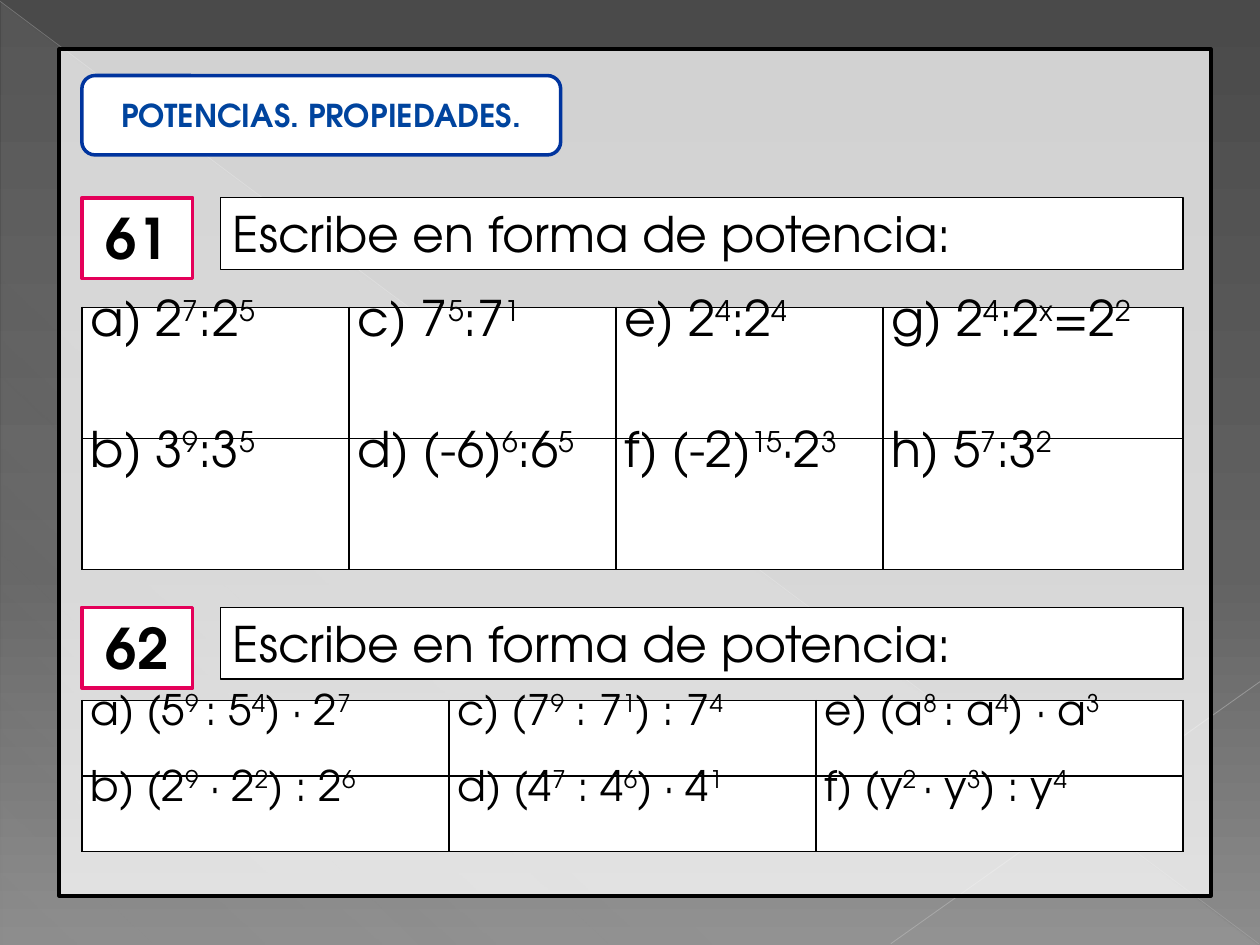
"""Build a slide of exercises on the properties of powers."""
import dataclasses

import lxml.etree
import pptx
import pptx.dml.color
import pptx.enum.shapes
import pptx.enum.text
import pptx.oxml.ns
import pptx.slide
import pptx.util

Inches = pptx.util.Inches
Pt = pptx.util.Pt
qn = pptx.oxml.ns.qn
Kind = pptx.enum.shapes.MSO_SHAPE
Align = pptx.enum.text.PP_ALIGN
Anchor = pptx.enum.text.MSO_ANCHOR
Fit = pptx.enum.text.MSO_AUTO_SIZE

FONT = "TeX Gyre Adventor"
COLORS = {
    "black": "000000", "white": "FFFFFF", "pink": "E40059",
    "edge": "00349E", "title": "00449E", "veil": "D2D2D2",
    "ray": "BFBFBF", "beam": "C6C6C6",
    "dark": "4A4A4A", "mid": "626262", "light": "8C8C8C",
}
LEFT, WIDTH = 0.65, 8.74


@dataclasses.dataclass
class Box:
    """A rectangle with a line of text."""
    at: tuple[float, float, float, float]
    text: str
    size: int
    line: str = "black"
    weight: float = 2
    ink: str = "black"
    bold: bool = True
    kind: int = Kind.RECTANGLE
    align: int = Align.CENTER
    anchor: int = Anchor.TOP
    fit: int = Fit.SHAPE_TO_FIT_TEXT


@dataclasses.dataclass
class Grid:
    """A table whose cells alternate base and raised text around bars."""
    top: float
    cols: list[float]
    high: float
    size: int
    rows: list[list[str]]


@dataclasses.dataclass
class Ray:
    """A thin, faint line."""
    start: tuple[float, float]
    end: tuple[float, float]
    color: str
    weight: float
    alpha: int


def rgb(name: str) -> pptx.dml.color.RGBColor:
    """Return a named colour."""
    return pptx.dml.color.RGBColor.from_string(COLORS[name])


def put(item: object, form: dict) -> None:
    """Set each format value on an item."""
    for name, value in form.items():
        setattr(item, name, value)


def fade(node, alpha: int) -> None:
    """Set the opacity of the first colour in a node."""
    tint = next(node.iter(qn("a:srgbClr")))
    lxml.etree.SubElement(tint, qn("a:alpha"), val=str(alpha * 1000))


def blend(fill, node, stops: list[tuple[int, str, int]], angle: int) -> None:
    """Give a fill a linear gradient of (place, colour, opacity) stops."""
    fill.gradient()
    grad = next(node.iter(qn("a:gradFill")))
    for child in list(grad):
        grad.remove(child)
    items = lxml.etree.SubElement(grad, qn("a:gsLst"))
    for pos, name, alpha in stops:
        stop = lxml.etree.SubElement(items, qn("a:gs"), pos=str(pos * 1000))
        lxml.etree.SubElement(stop, qn("a:srgbClr"), val=COLORS[name])
        if alpha < 100:
            fade(stop, alpha)
    lxml.etree.SubElement(grad, qn("a:lin"), ang=str(angle * 60000), scaled="0")


def write(para, text: str, size: int, ink: str, bold: bool = False) -> None:
    """Add text to a paragraph, raising every second part."""
    for index, part in enumerate(text.split("|")):
        if not part:
            continue
        run = para.add_run()
        run.text = part
        put(run.font, {"name": FONT, "size": Pt(size), "bold": bold})
        run.font.color.rgb = rgb(ink)
        if index % 2:
            run.font._element.set("baseline", "30000")


def shape(slide: pptx.slide.Slide, kind: int, at: tuple):
    """Add a preset shape without a shadow."""
    item = slide.shapes.add_shape(kind, *map(Inches, at))
    item.shadow.inherit = False
    return item


def edge(line, name: str, weight: float) -> None:
    """Set the colour and width of a line."""
    line.color.rgb = rgb(name)
    line.width = Pt(weight)


def draw_box(slide: pptx.slide.Slide, box: Box) -> None:
    """Draw a white box with text."""
    item = shape(slide, box.kind, box.at)
    item.fill.solid()
    item.fill.fore_color.rgb = rgb("white")
    edge(item.line, box.line, box.weight)
    frame = item.text_frame
    put(frame, {"word_wrap": True, "auto_size": box.fit,
                "vertical_anchor": box.anchor})
    para = frame.paragraphs[0]
    para.alignment = box.align
    write(para, box.text, box.size, box.ink, box.bold)


def draw_ray(slide: pptx.slide.Slide, ray: Ray) -> None:
    """Draw a faint line."""
    straight = pptx.enum.shapes.MSO_CONNECTOR.STRAIGHT
    item = slide.shapes.add_connector(straight, *map(Inches, ray.start + ray.end))
    edge(item.line, ray.color, ray.weight)
    node = item._element.spPr
    fade(node, ray.alpha)
    lxml.etree.SubElement(node, qn("a:effectLst"))


def draw_grid(slide: pptx.slide.Slide, grid: Grid) -> None:
    """Draw a table of exercises."""
    count = len(grid.rows)
    at = (LEFT, grid.top, WIDTH, grid.high * count)
    table = slide.shapes.add_table(count, len(grid.cols), *map(Inches, at)).table
    put(table, {"first_row": False, "horz_banding": False})
    for col, wide in zip(table.columns, grid.cols):
        col.width = Inches(wide)
    for row, texts in zip(table.rows, grid.rows):
        row.height = Inches(grid.high)
        for cell, text in zip(row.cells, texts):
            put(cell, {"margin_left": Inches(0.07), "margin_right": Inches(0.07),
                       "margin_top": 0, "margin_bottom": 0})
            node = cell._tc.get_or_add_tcPr()
            for side in ("lnL", "lnR", "lnT", "lnB"):
                line = lxml.etree.SubElement(node, qn("a:" + side), w=str(Pt(1)))
                solid = lxml.etree.SubElement(line, qn("a:solidFill"))
                lxml.etree.SubElement(solid, qn("a:srgbClr"), val=COLORS["black"])
            cell.fill.solid()
            cell.fill.fore_color.rgb = rgb("white")
            para = cell.text_frame.paragraphs[0]
            para.line_spacing = 0.8
            write(para, text, grid.size, "black")


RAYS = [
    Ray((0, 0.01), (9.99, 7.49), "ray", 0.39, 35),
    Ray((10, 5.41), (7.07, 7.49), "beam", 0.47, 45),
]
TITLE = Box((LEFT, 0.6, 3.8, 0.63), "POTENCIAS. PROPIEDADES.", 18, "edge",
            ink="title", kind=Kind.ROUNDED_RECTANGLE, anchor=Anchor.MIDDLE,
            fit=Fit.NONE)
TASKS = [("61", 1.57), ("62", 4.82)]
GRIDS = [
    Grid(2.44, [2.12, 2.12, 2.12, 2.38], 1.04, 28, [
        ["a) 2|7|:2|5", "c) 7|5|:7|1", "e) 2|4|:2|4", "g) 2|4|:2|x|=2|2"],
        ["b) 3|9|:3|5", "d) (-6)|6|:6|5", "f) (-2)|15|·2|3", "h) 5|7|:3|2"],
    ]),
    Grid(5.56, [WIDTH / 3] * 3, 0.6, 24, [
        ["a) (5|9 |: 5|4|) · 2|7", "c) (7|9| : 7|1|) : 7|4",
         "e) (a|8 |: a|4|) · a|3"],
        ["b) (2|9| · 2|2|) : 2|6", "d) (4|7| : 4|6|) · 4|1",
         "f) (y|2 |· y|3|) : y|4"],
    ]),
]


def main() -> None:
    """Build and save the slide."""
    deck = pptx.Presentation()
    put(deck, {"slide_width": Inches(10), "slide_height": Inches(7.5)})
    slide = deck.slides.add_slide(deck.slide_layouts[6])
    blend(slide.background.fill, slide.element,
          [(0, "dark", 100), (60, "mid", 100), (100, "light", 100)], 90)
    veil = shape(slide, Kind.RIGHT_TRIANGLE, (0.01, 0.02, 9.98, 7.48))
    blend(veil.fill, veil._element,
          [(0, "veil", 10), (70, "veil", 8), (100, "veil", 1)], 133)
    veil.line.fill.background()
    for ray in RAYS:
        draw_ray(slide, ray)
    panel = shape(slide, Kind.RECTANGLE, (0.47, 0.39, 9.14, 6.72))
    panel.fill.solid()
    panel.fill.fore_color.rgb = rgb("white")
    fade(panel._element.spPr, 75)
    edge(panel.line, "black", 2)
    draw_box(slide, TITLE)
    for label, top in TASKS:
        draw_box(slide, Box((LEFT, top, 0.88, 0.64), label, 32, "pink"))
        draw_box(slide, Box((1.75, top, 7.64, 0.57), "Escribe en forma de potencia:",
                            28, weight=0.75, bold=False, align=Align.LEFT))
    for grid in GRIDS:
        draw_grid(slide, grid)
    deck.save("out.pptx")


if __name__ == "__main__":
    main()
